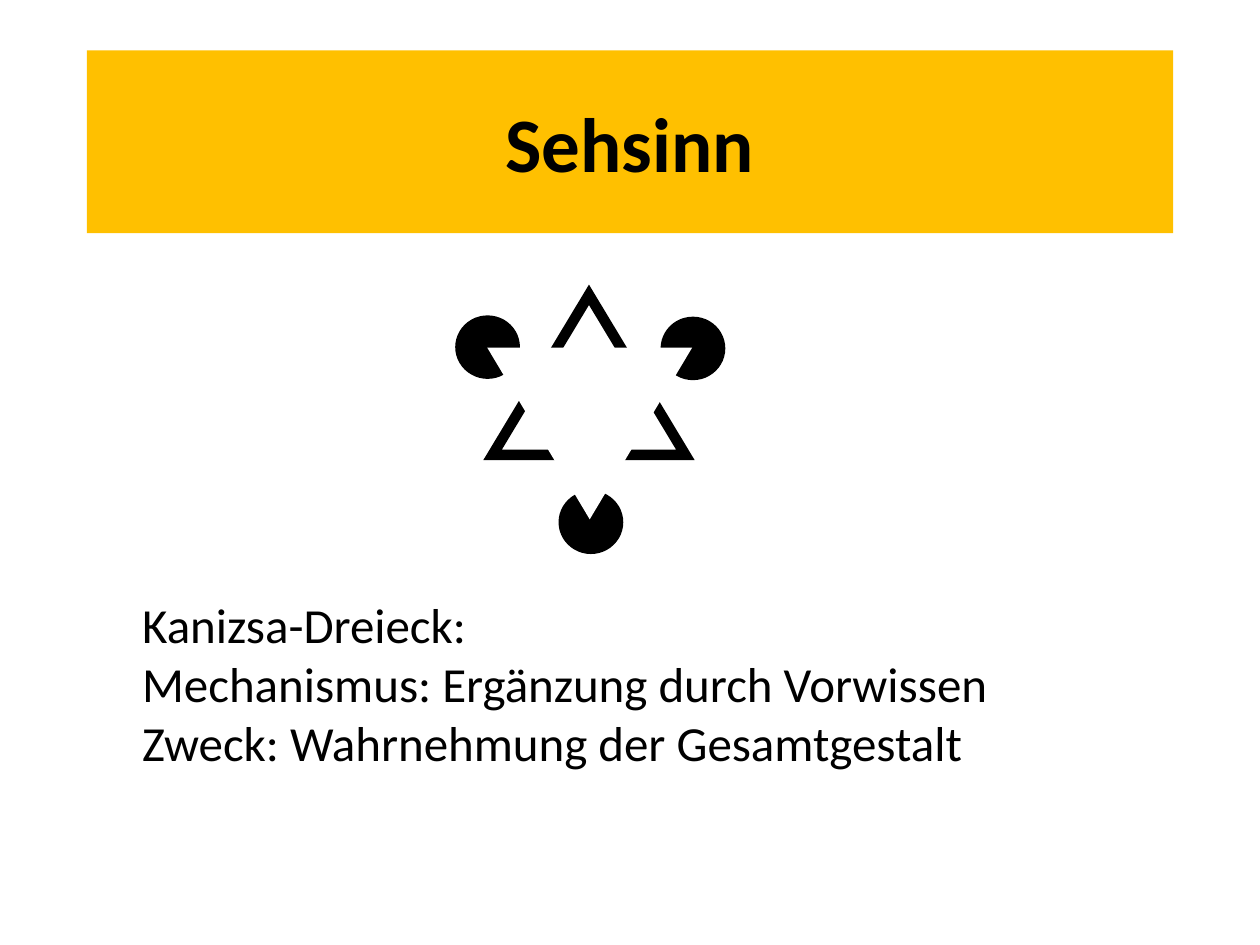
from lxml.etree import SubElement
from pptx import Presentation
from pptx.dml.color import RGBColor
from pptx.enum.shapes import MSO_SHAPE
from pptx.enum.text import MSO_ANCHOR, MSO_AUTO_SIZE, PP_ALIGN
from pptx.oxml.ns import qn
from pptx.util import Inches, Pt

AMBER = RGBColor(0xFF, 0xC0, 0x00)
BLACK = RGBColor(0x00, 0x00, 0x00)
WHITE = RGBColor(0xFF, 0xFF, 0xFF)

prs = Presentation()
prs.slide_width, prs.slide_height = Inches(10), Inches(7.5)
CELL = prs.slide_width / 100


def cells(*values):
    return [round(v * CELL) for v in values]


def add_figure(group, kind, box, fill, line, width):
    sp = group.shapes.add_shape(kind, *cells(*box))
    sp.shadow.inherit = False
    if fill is None:
        sp.fill.background()
    else:
        sp.fill.solid()
        sp.fill.fore_color.rgb = fill
    sp.line.color.rgb = line
    sp.line.width = Pt(width)
    SubElement(sp.line._get_or_add_ln(), qn("a:miter"), lim="800000")
    return sp


s = prs.slides.add_slide(prs.slide_layouts[5])

title = s.shapes.title
title.left, title.top, title.width, title.height = cells(6.9, 4, 86.2, 14.5)
title.fill.solid()
title.fill.fore_color.rgb = AMBER
tf = title.text_frame
tf.text = "Sehsinn"
tf.vertical_anchor = MSO_ANCHOR.MIDDLE
p = tf.paragraphs[0]
p.alignment = PP_ALIGN.CENTER
p.font.bold = True
p.font.size = Pt(44)
p.font.name = "Calibri"
p.font.color.rgb = BLACK

tf = s.shapes.add_textbox(*cells(10.3, 46.7, 81.8, 15.1)).text_frame
tf.word_wrap = True
tf.auto_size = MSO_AUTO_SIZE.SHAPE_TO_FIT_TEXT
tf.text = "\n".join([
    "Kanizsa-Dreieck:",
    "Mechanismus: Ergänzung durch Vorwissen",
    "Zweck: Wahrnehmung der Gesamtgestalt",
])
for p in tf.paragraphs:
    for r in p.runs:
        r.font.size = Pt(28)
        r.font.name = "Calibri"
        r.font.color.rgb = BLACK

kanizsa = s.shapes.add_group_shape()
add_figure(kanizsa, MSO_SHAPE.ISOSCELES_TRIANGLE, (39.1, 23.4, 15.3, 12.7), None, BLACK, 6)
for left, top in [(36.2, 25.1), (52.5, 25.2), (44.4, 39)]:
    add_figure(kanizsa, MSO_SHAPE.OVAL, (left, top, 5, 4.9), BLACK, BLACK, 1)
cover = add_figure(kanizsa, MSO_SHAPE.ISOSCELES_TRIANGLE, (39.4, 28, 14.8, 12.4), WHITE, WHITE, 6)
cover.rotation = 180

prs.save("out.pptx")
